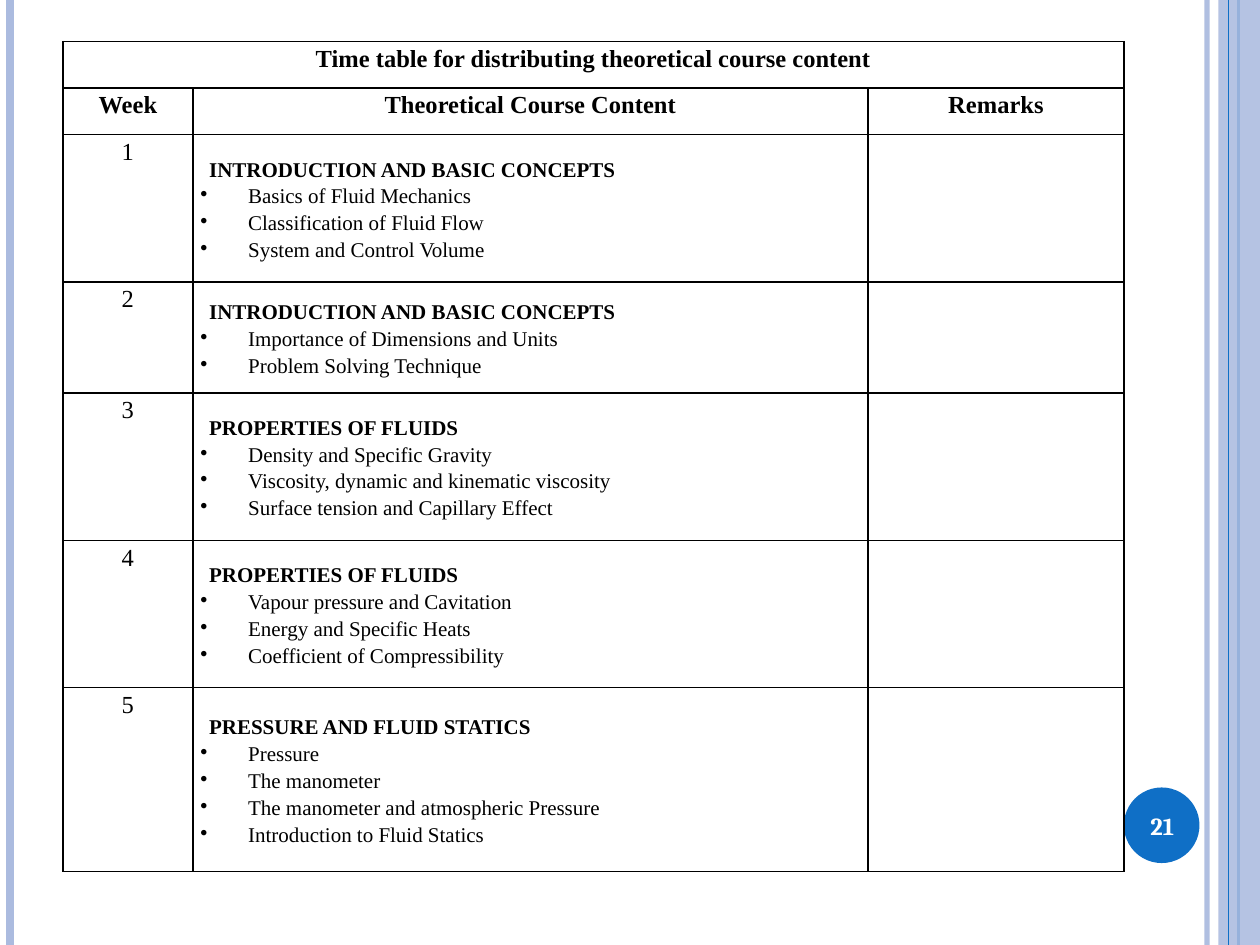
import pptx
import pptx.chart.data
import pptx.dml.color
import pptx.enum.shapes
import pptx.enum.text
import pptx.oxml
import pptx.oxml.ns
import pptx.util
from lxml import etree

Inches, Pt = pptx.util.Inches, pptx.util.Pt
qn = pptx.oxml.ns.qn
ALIGN = pptx.enum.text.PP_ALIGN
ANCHOR = pptx.enum.text.MSO_ANCHOR
SHAPE = pptx.enum.shapes.MSO_SHAPE

COLORS = {"band": "ABBBDF", "accent": "0F6FC6", "ink": "000000", "paper": "FFFFFF"}

WEEKS = [
    ("INTRODUCTION AND BASIC CONCEPTS",
     ["Basics of Fluid Mechanics", "Classification of Fluid Flow",
      "System and Control Volume"]),
    ("INTRODUCTION AND BASIC CONCEPTS",
     ["Importance of Dimensions and Units", "Problem Solving Technique"]),
    ("PROPERTIES OF FLUIDS",
     ["Density and Specific Gravity", "Viscosity, dynamic and kinematic viscosity",
      "Surface tension and Capillary Effect"]),
    ("PROPERTIES OF FLUIDS",
     ["Vapour pressure and Cavitation", "Energy and Specific Heats",
      "Coefficient of Compressibility"]),
    ("PRESSURE AND FLUID STATICS",
     ["Pressure", "The manometer", "The manometer and atmospheric Pressure",
      "Introduction to Fluid Statics"]),
]
COLUMN_WIDTHS = [1.03, 5.36, 2.03]
ROW_HEIGHTS = [0.37, 0.37, 1.17, 0.88, 1.17, 1.17, 1.46]


def rgb(name):
    return pptx.dml.color.RGBColor.from_string(COLORS[name])


class SlideBuilder:
    """Holds the text style and the current slide."""
    font = "Times New Roman"
    heading_size, topic_size = 14, 12

    def __init__(self, slide):
        self.slide = slide

    def set_alpha(self, element, percent):
        for color in element.iter(qn("a:srgbClr")):
            etree.SubElement(color, qn("a:alpha")).set("val", str(percent * 1000))

    def vertical_rule(self, x, color, width, alpha=100):
        rule = self.slide.shapes.add_connector(
            pptx.enum.shapes.MSO_CONNECTOR.STRAIGHT,
            Inches(x), 0, Inches(x), Inches(7.5))
        rule.line.color.rgb = rgb(color)
        rule.line.width = Pt(width)
        if alpha < 100:
            self.set_alpha(rule.line._ln, alpha)
        etree.SubElement(rule._element.spPr, qn("a:effectLst"))

    def filled_shape(self, kind, box, color, alpha=100):
        shape = self.slide.shapes.add_shape(kind, *map(Inches, box))
        shape.shadow.inherit = False
        shape.fill.solid()
        shape.fill.fore_color.rgb = rgb(color)
        shape.line.fill.background()
        if alpha < 100:
            self.set_alpha(shape._element.spPr, alpha)

    def style_font(self, paragraph, size, bold, color="ink", name=None):
        font = paragraph.font
        font.name, font.size, font.bold = name or self.font, Pt(size), bold
        font.color.rgb = rgb(color)

    def page_number(self, box, text):
        frame = self.slide.shapes.add_textbox(*map(Inches, box)).text_frame
        frame.word_wrap = True
        frame.vertical_anchor = ANCHOR.MIDDLE
        number = frame.paragraphs[0]
        number.text, number.alignment = text, ALIGN.CENTER
        self.style_font(number, self.heading_size, True, "paper", "Cambria")

    def table(self, left, top, widths, heights):
        table = self.slide.shapes.add_table(
            len(heights), len(widths), Inches(left), Inches(top),
            Inches(sum(widths)), Inches(sum(heights))).table
        table.first_row = table.horz_banding = False
        for column, width in zip(table.columns, widths):
            column.width = Inches(width)
        for row, height in zip(table.rows, heights):
            row.height = Inches(height)
        for cell in table.iter_cells():
            cell.margin_left = cell.margin_right = Inches(0.06)
            cell.margin_top = cell.margin_bottom = 0
            cell.fill.background()
            self.cell_borders(cell)
        return table

    def cell_borders(self, cell):
        properties = cell._tc.get_or_add_tcPr()
        for index, side in enumerate(("lnL", "lnR", "lnT", "lnB")):
            border = etree.Element(qn(f"a:{side}"), w=str(Pt(1)))
            fill = etree.SubElement(border, qn("a:solidFill"))
            etree.SubElement(fill, qn("a:srgbClr"), val=COLORS["ink"])
            properties.insert(index, border)

    def centred_cell(self, cell, text, bold=True, before=6, after=6):
        label = cell.text_frame.paragraphs[0]
        label.text, label.alignment = text, ALIGN.CENTER
        label.line_spacing = 1.15
        label.space_before, label.space_after = Pt(before), Pt(after)
        self.style_font(label, self.heading_size, bold)

    def topic_cell(self, cell, heading, topics):
        cell.vertical_anchor = ANCHOR.MIDDLE
        frame = cell.text_frame
        title = frame.paragraphs[0]
        self.topic_line(title, heading, 0.07, 0, bold=True)
        for topic in topics:
            self.topic_line(frame.add_paragraph(), topic, 0.38, -0.38, bullet="•")

    def topic_line(self, paragraph, text, margin, indent, bold=False, bullet=None):
        paragraph.text = text
        properties = paragraph._p.get_or_add_pPr()
        properties.set("marL", str(Inches(margin)))
        properties.set("indent", str(Inches(indent)))
        if bullet:
            etree.SubElement(properties, qn("a:buChar"), char=bullet)
        paragraph.line_spacing = 1.15
        self.style_font(paragraph, self.topic_size, bold)


def main():
    deck = pptx.Presentation()
    deck.slide_width, deck.slide_height = Inches(10), Inches(7.5)
    builder = SlideBuilder(deck.slides.add_slide(deck.slide_layouts[6]))

    # Side bands and page number disc
    builder.vertical_rule(9.58, "band", 3, alpha=93)
    builder.vertical_rule(0.08, "band", 4.5)
    builder.vertical_rule(9.83, "accent", 1.5)
    builder.filled_shape(SHAPE.RECTANGLE, (9.67, 0, 0.33, 7.5), "band", alpha=87)
    builder.vertical_rule(9.75, "accent", 0.75)
    builder.filled_shape(SHAPE.OVAL, (8.92, 6.25, 0.6, 0.6), "accent")

    # Timetable headings
    timetable = builder.table(0.5, 0.33, COLUMN_WIDTHS, ROW_HEIGHTS)
    timetable.cell(0, 0).merge(timetable.cell(0, 2))
    builder.centred_cell(timetable.cell(0, 0),
                         "Time table for distributing theoretical course content",
                         before=0, after=10)
    for column, label in enumerate(("Week", "Theoretical Course Content", "Remarks")):
        builder.centred_cell(timetable.cell(1, column), label)

    # One row per week
    for week, (heading, topics) in enumerate(WEEKS, start=1):
        builder.centred_cell(timetable.cell(week + 1, 0), str(week), bold=False)
        builder.topic_cell(timetable.cell(week + 1, 1), heading, topics)

    builder.page_number((8.89, 6.27, 0.67, 0.57), "21")
    deck.save("out.pptx")


if __name__ == "__main__":
    main()
